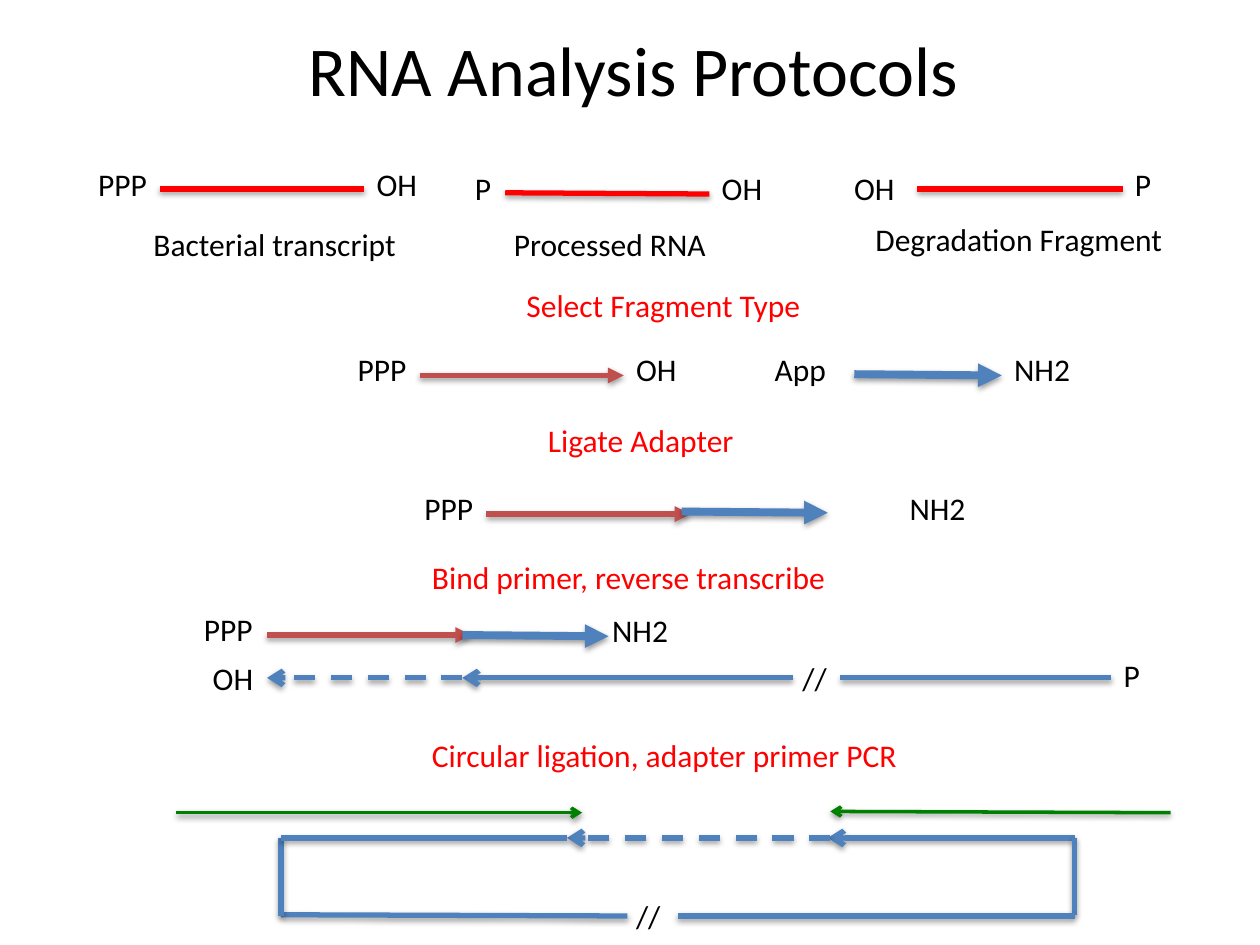
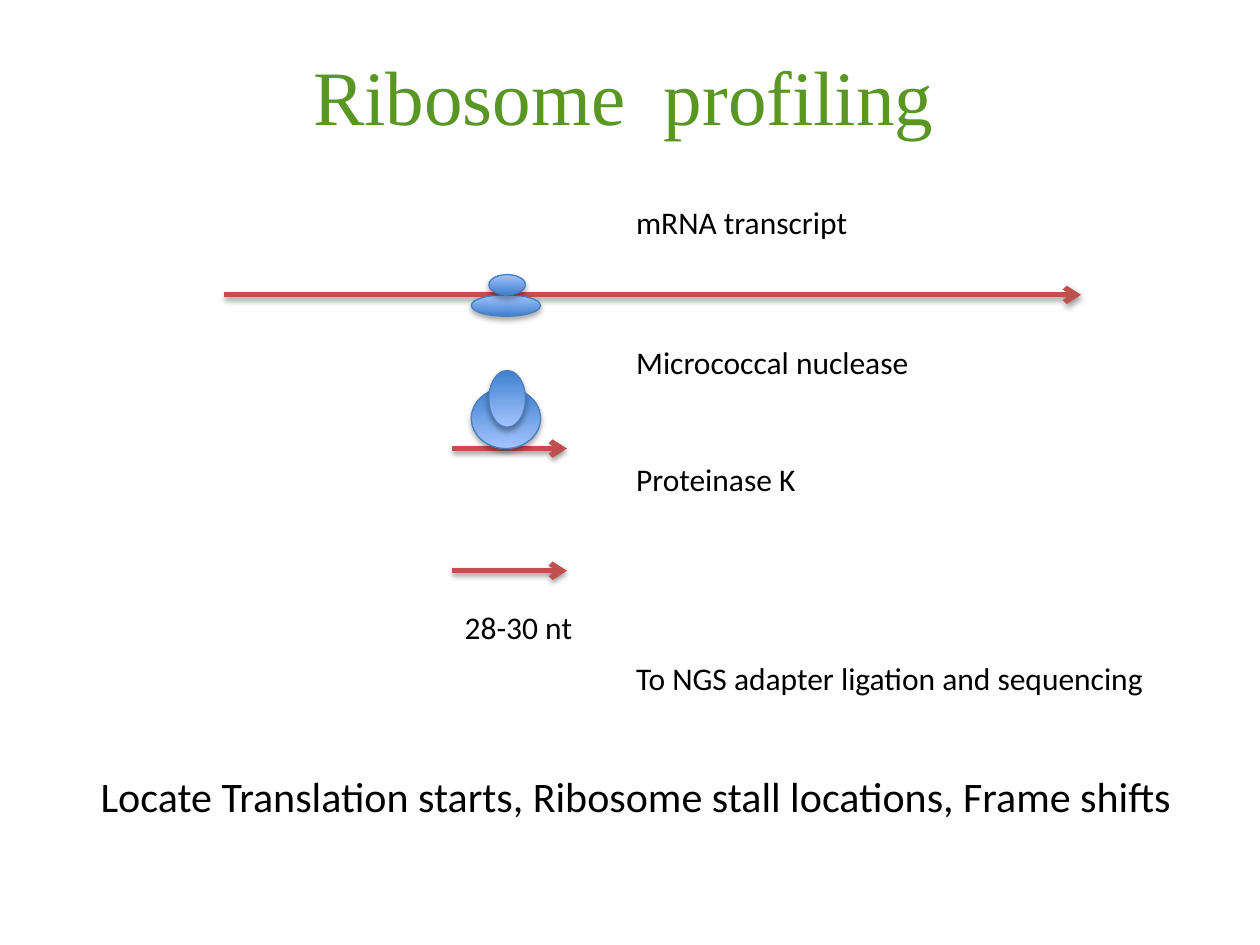
"""Build two slides on RNA analysis protocols and ribosome profiling."""
from lxml.etree import SubElement
from pptx import Presentation
from pptx.dml.color import RGBColor
from pptx.enum.dml import MSO_LINE
from pptx.enum.shapes import MSO_CONNECTOR, MSO_SHAPE
from pptx.enum.text import MSO_ANCHOR, MSO_AUTO_SIZE, PP_ALIGN
from pptx.oxml.ns import qn
from pptx.util import Inches, Pt

COLORS = {
    "black": "000000", "red": "FF0000", "brown": "C0504D", "blue": "4F81BD",
    "green": "008000", "title green": "5A9623", "outline": "4B7EBC",
    "ribosome dark": "3F80CE", "ribosome light": "A4C4FF",
}
LINE_STYLES = {
    "fragment": {"color": "red"},
    "rna": {"color": "brown", "head": "triangle"},
    "adapter": {"color": "blue", "width": 4.5, "head": "triangle"},
    "strand": {"color": "blue"},
    "primer": {"color": "blue", "head": "arrow"},
    "copied": {"color": "blue", "head": "arrow", "dashed": True},
    "pcr": {"color": "green", "width": 2, "head": "arrow"},
    "transcript": {"color": "brown", "head": "arrow"},
}
END_WIDTHS = {"PPP": 0.59, "OH": 0.53, "P": 0.33, "App": 0.61, "NH2": 0.65, "//": 0.4}
LABEL_HEIGHT = 0.4

END_LABELS = [
    ("PPP", 0.68, 1.26), ("OH", 2.89, 1.26),
    ("P", 3.67, 1.29), ("OH", 5.63, 1.29),
    ("OH", 6.68, 1.29), ("P", 8.91, 1.26),
    ("PPP", 2.74, 2.73), ("OH", 4.95, 2.73), ("App", 6.05, 2.73), ("NH2", 7.95, 2.73),
    ("PPP", 3.27, 3.83), ("NH2", 7.12, 3.83),
    ("PPP", 1.52, 4.79), ("NH2", 4.76, 4.8),
    ("OH", 1.59, 5.18), ("//", 6.27, 5.18), ("P", 8.82, 5.16),
    ("//", 4.95, 7.07),
]
FRAGMENT_NAMES = [
    ("Bacterial transcript", 1.12, 1.74, 2.14),
    ("Processed RNA", 3.98, 1.74, 1.74),
    ("Degradation Fragment", 6.85, 1.7, 2.5),
]
PROTOCOL_STEPS = [
    ("Select Fragment Type", 4.08, 2.22, 2.4),
    ("Ligate Adapter", 4.25, 3.29, 1.69),
    ("Bind primer, reverse transcribe", 3.33, 4.38, 3.35),
    ("Circular ligation, adapter primer PCR", 3.33, 5.79, 3.93),
]
PROTOCOL_LINES = [
    ("fragment", (1.27, 1.5), (2.89, 1.5)),
    ("fragment", (4.01, 1.53), (5.63, 1.54)),
    ("fragment", (7.28, 1.5), (8.91, 1.5)),
    ("rna", (3.33, 2.98), (4.95, 2.98)),
    ("adapter", (6.78, 2.97), (7.95, 2.98)),
    ("rna", (3.86, 4.08), (5.48, 4.08)),
    ("adapter", (5.41, 4.06), (6.57, 4.07)),
    ("rna", (2.12, 5.04), (3.74, 5.04)),
    ("adapter", (3.67, 5.04), (4.83, 5.05)),
    ("primer", (6.29, 5.38), (3.67, 5.38)),
    ("copied", (3.67, 5.38), (2.12, 5.38)),
    ("strand", (6.67, 5.38), (8.82, 5.38)),
    ("primer", (8.53, 6.65), (6.57, 6.65)),
    ("copied", (6.59, 6.65), (4.5, 6.65)),
    ("strand", (8.53, 6.65), (8.53, 7.26)),
    ("strand", (8.53, 7.27), (5.38, 7.27)),
    ("strand", (4.98, 7.27), (2.23, 7.26)),
    ("strand", (2.23, 7.27), (2.23, 6.65)),
    ("strand", (4.5, 6.65), (2.23, 6.65)),
    ("pcr", (1.4, 6.45), (4.62, 6.45)),
    ("pcr", (9.29, 6.45), (6.59, 6.44)),
]

PROFILING_LABELS = [
    ("mRNA transcript", 4.95, 1.56, 1.9),
    ("Micrococcal nuclease", 4.95, 2.67, 2.39),
    ("Proteinase K", 4.95, 3.6, 1.48),
    ("28-30 nt", 3.59, 4.78, 1.06),
    ("To NGS adapter ligation and sequencing", 4.95, 5.18, 4.27),
]
PROFILING_LINES = [
    ("transcript", (1.78, 2.34), (8.58, 2.34)),
    ("transcript", (3.59, 3.56), (4.5, 3.56)),
    ("transcript", (3.59, 4.53), (4.5, 4.53)),
]
RIBOSOME_PARTS = [
    (3.74, 2.34, 0.55, 0.17, 90), (3.88, 2.18, 0.29, 0.16, 90),
    (3.74, 3.08, 0.55, 0.48, 270), (3.88, 2.94, 0.29, 0.45, 270),
]
CONCLUSION = "Locate Translation starts, Ribosome stall locations, Frame shifts"


def rgb(name):
    """Return the named colour."""
    return RGBColor.from_string(COLORS[name])


def write(shape, text, size=18, color="black", font="Calibri",
          align=PP_ALIGN.LEFT, anchor=MSO_ANCHOR.TOP, wrap=True):
    """Put one formatted paragraph in a shape."""
    frame = shape.text_frame
    frame.word_wrap = wrap
    frame.vertical_anchor = anchor
    frame.auto_size = MSO_AUTO_SIZE.NONE if wrap else MSO_AUTO_SIZE.SHAPE_TO_FIT_TEXT
    para = frame.paragraphs[0]
    para.alignment = align
    span = para.add_run()
    span.text = text
    span.font.size = Pt(size)
    span.font.name = font
    span.font.color.rgb = rgb(color)


def add_title(page, text, place, **style):
    """Move and fill the title placeholder."""
    title = page.shapes.title
    title.left, title.top, title.width, title.height = map(Inches, place)
    write(title, text, **style)


def add_label(page, text, left, top, width, height=LABEL_HEIGHT, wrap=False, **style):
    """Add a text box."""
    box = page.shapes.add_textbox(*map(Inches, (left, top, width, height)))
    write(box, text, wrap=wrap, **style)


def add_shadow(shape, distance, opacity):
    """Cast a soft shadow straight down."""
    effects = SubElement(shape._element.spPr, qn("a:effectLst"))
    shadow = SubElement(effects, qn("a:outerShdw"), blurRad=str(Pt(3.15)),
                        dist=str(Pt(distance)), dir="5400000", rotWithShape="0")
    color = SubElement(shadow, qn("a:srgbClr"), val=COLORS["black"])
    SubElement(color, qn("a:alpha"), val=str(opacity * 1000))


def add_line(page, start, end, color, width=3, head=None, dashed=False):
    """Draw a straight line with an optional arrowhead."""
    line = page.shapes.add_connector(MSO_CONNECTOR.STRAIGHT, *map(Inches, start + end))
    line.line.color.rgb = rgb(color)
    line.line.width = Pt(width)
    if dashed:
        line.line.dash_style = MSO_LINE.DASH
    if head:
        SubElement(line.line._get_or_add_ln(), qn("a:tailEnd"), type=head)
    add_shadow(line, 1.6, 38)


def add_lines(page, lines):
    """Draw lines in their named styles."""
    for style, start, end in lines:
        add_line(page, start, end, **LINE_STYLES[style])


def add_ribosome_part(page, left, top, width, height, angle):
    """Draw one shaded ribosome subunit."""
    part = page.shapes.add_shape(MSO_SHAPE.OVAL, *map(Inches, (left, top, width, height)))
    part.fill.gradient()
    part.fill.gradient_angle = angle
    for stop, shade, position in zip(part.fill.gradient_stops,
                                     ("ribosome dark", "ribosome light"), (0, 1)):
        stop.color.rgb = rgb(shade)
        stop.position = position
    part.line.color.rgb = rgb("outline")
    part.line.width = Pt(0.75)
    add_shadow(part, 1.8, 35)


def build_protocols(page):
    """Fill the RNA protocols slide."""
    add_title(page, "RNA Analysis Protocols", (2.35, 0.16, 5.41, 0.77), size=40)
    add_lines(page, PROTOCOL_LINES)
    for text, left, top in END_LABELS:
        add_label(page, text, left, top, END_WIDTHS[text])
    for name in FRAGMENT_NAMES:
        add_label(page, *name)
    for step in PROTOCOL_STEPS:
        add_label(page, *step, color="red")


def build_profiling(page):
    """Fill the ribosome profiling slide."""
    add_title(page, "Ribosome  profiling", (0.45, 0.13, 9, 1.25), size=44,
              color="title green", font="Times New Roman",
              align=PP_ALIGN.CENTER, anchor=MSO_ANCHOR.MIDDLE)
    add_lines(page, PROFILING_LINES)
    for part in RIBOSOME_PARTS:
        add_ribosome_part(page, *part)
    for label in PROFILING_LABELS:
        add_label(page, *label)
    add_label(page, CONCLUSION, 0.7, 6.07, 8.95, height=0.5, wrap=True, size=24)


def main():
    """Build and save the deck."""
    deck = Presentation()
    deck.slide_width, deck.slide_height = Inches(10), Inches(7.5)
    title_only = deck.slide_layouts[5]
    for build in (build_protocols, build_profiling):
        build(deck.slides.add_slide(title_only))
    deck.save("out.pptx")


if __name__ == "__main__":
    main()
